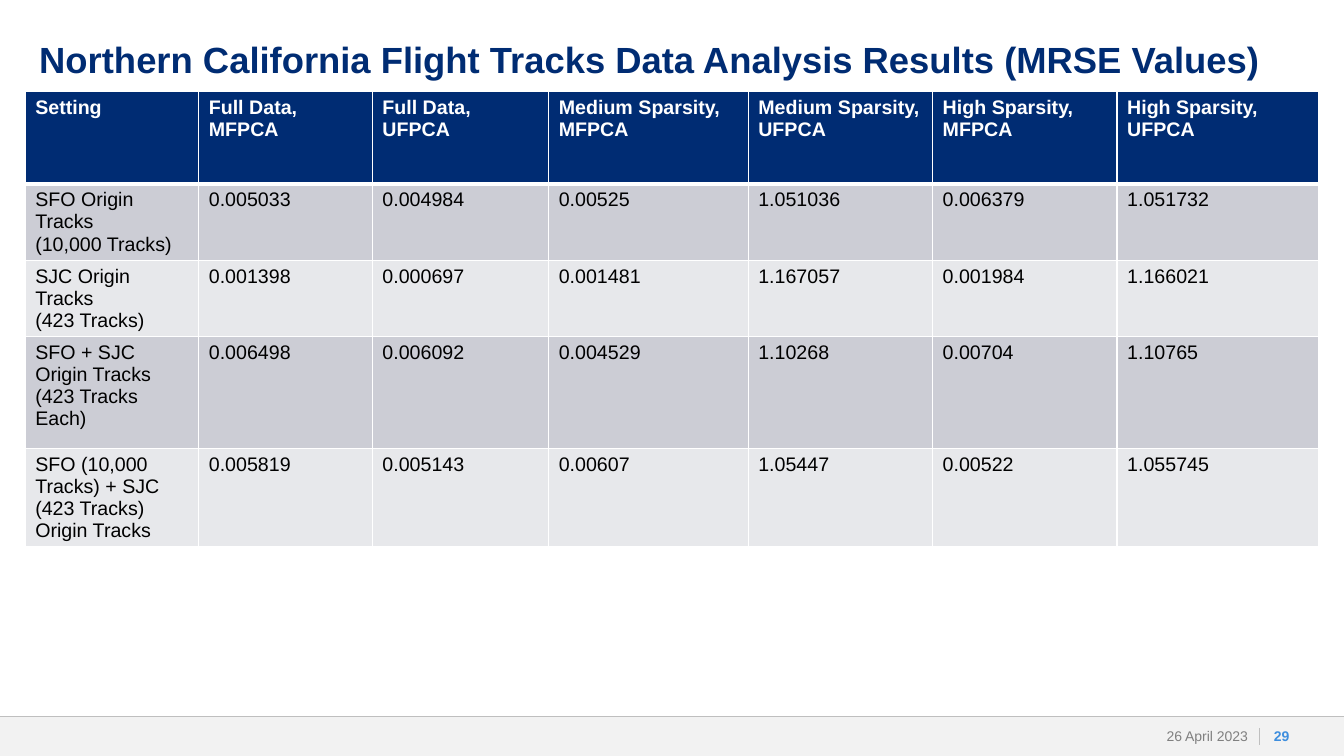
"""Build the slide of MRSE values for Northern California flight tracks."""
from lxml import etree
from pptx import Presentation
from pptx.dml.color import RGBColor
from pptx.enum.shapes import MSO_CONNECTOR, MSO_SHAPE
from pptx.enum.text import MSO_ANCHOR, MSO_AUTO_SIZE, PP_ALIGN
from pptx.oxml.ns import qn
from pptx.util import Pt

LEFT, RIGHT, CENTER = PP_ALIGN.LEFT, PP_ALIGN.RIGHT, PP_ALIGN.CENTER
TOP, MIDDLE = MSO_ANCHOR.TOP, MSO_ANCHOR.MIDDLE
STRAIGHT, RECTANGLE = MSO_CONNECTOR.STRAIGHT, MSO_SHAPE.RECTANGLE
FIXED_SIZE = MSO_AUTO_SIZE.NONE

TITLE = "Northern California Flight Tracks Data Analysis Results (MRSE Values)"
DATE, PAGE_NUMBER = "26 April 2023", "29"
ROWS = [
    ("Setting", "Full Data,\nMFPCA", "Full Data,\nUFPCA", "Medium Sparsity,\nMFPCA",
     "Medium Sparsity,\nUFPCA", "High Sparsity,\nMFPCA", "High Sparsity,\nUFPCA"),
    ("SFO Origin Tracks\n(10,000 Tracks)", "0.005033", "0.004984", "0.00525",
     "1.051036", "0.006379", "1.051732"),
    ("SJC Origin Tracks\n(423 Tracks)", "0.001398", "0.000697", "0.001481",
     "1.167057", "0.001984", "1.166021"),
    ("SFO + SJC Origin Tracks\n(423 Tracks Each)", "0.006498", "0.006092", "0.004529",
     "1.10268", "0.00704", "1.10765"),
    ("SFO (10,000 Tracks) + SJC (423 Tracks) Origin Tracks", "0.005819", "0.005143",
     "0.00607", "1.05447", "0.00522", "1.055745"),
]
COLUMN_WIDTHS = [124, 124, 126, 142.5, 131.75, 131.75, 144]
ROW_HEIGHTS = [66, 54.5, 54.5, 80, 70]
COLORS = {"navy": "002C73", "white": "FFFFFF", "black": "000000", "odd": "CCCDD5",
          "even": "E7E8EB", "bar": "F2F2F2", "rule": "BFBFBF", "gray": "808080",
          "blue": "3E8EDE"}
PAGE_WIDTH, PAGE_HEIGHT = 960, 540
FOOTER_TOP, FOOTER_HEIGHT = 512, 28


def color(name):
    return RGBColor.from_string(COLORS[name])


def format_text(frame, size, name, bold=False, align=LEFT, spacing=1.0):
    for para in frame.paragraphs:
        para.alignment = align
        para.line_spacing = spacing
        for span in para.runs:
            values = {"name": "Arial", "size": Pt(size), "bold": bold}
            for key, value in values.items():
                setattr(span.font, key, value)
            span.font.color.rgb = color(name)


def set_frame(frame, side_margin, anchor):
    values = {"margin_left": Pt(side_margin), "margin_right": Pt(side_margin),
              "margin_top": 0, "margin_bottom": 0, "word_wrap": True,
              "auto_size": FIXED_SIZE, "vertical_anchor": anchor}
    for key, value in values.items():
        setattr(frame, key, value)


def add_title(page):
    title = page.shapes.title
    title.left, title.top, title.width, title.height = Pt(28), Pt(30), Pt(888), Pt(60)
    title.text_frame.text = TITLE
    set_frame(title.text_frame, 0, TOP)
    format_text(title.text_frame, 26, "navy", bold=True, spacing=0.9)


def add_rule(page, x1, y1, x2, y2):
    rule = page.shapes.add_connector(STRAIGHT, Pt(x1), Pt(y1), Pt(x2), Pt(y2))
    rule.line.color.rgb = color("rule")
    rule.line.width = Pt(0.5)
    etree.SubElement(rule._element.spPr, qn("a:effectLst"))


def add_footer(page):
    bar = page.shapes.add_shape(RECTANGLE, 0, Pt(FOOTER_TOP), Pt(PAGE_WIDTH),
                                Pt(FOOTER_HEIGHT))
    bar.shadow.inherit = False
    bar.fill.solid()
    bar.fill.fore_color.rgb = color("bar")
    bar.line.fill.background()
    add_rule(page, 0, FOOTER_TOP, PAGE_WIDTH, FOOTER_TOP)
    add_rule(page, 899.5, 520, 899.5, 532)
    labels = [(DATE, 790.5, 108, 7.2, RIGHT, "gray", False),
              (PAGE_NUMBER, 900.5, 30, 0, CENTER, "blue", True)]
    for text, left, width, margin, align, name, bold in labels:
        box = page.shapes.add_textbox(Pt(left), Pt(FOOTER_TOP), Pt(width),
                                      Pt(FOOTER_HEIGHT))
        box.text_frame.text = text
        set_frame(box.text_frame, margin, MIDDLE)
        format_text(box.text_frame, 10, name, bold, align)


def set_borders(cell, top, bottom):
    properties = cell._tc.get_or_add_tcPr()
    for side, width in {"L": 1, "R": 1, "T": top, "B": bottom}.items():
        line = etree.SubElement(properties, qn(f"a:ln{side}"), w=str(Pt(width)))
        fill = etree.SubElement(line, qn("a:solidFill"))
        etree.SubElement(fill, qn("a:srgbClr"), val=COLORS["white"])


def add_results(page):
    frame = page.shapes.add_table(len(ROWS), len(COLUMN_WIDTHS), Pt(18), Pt(65.5),
                                  Pt(sum(COLUMN_WIDTHS)), Pt(sum(ROW_HEIGHTS)))
    table = frame.table
    for column, width in zip(table.columns, COLUMN_WIDTHS):
        column.width = Pt(width)
    for index, (row, height, texts) in enumerate(zip(table.rows, ROW_HEIGHTS, ROWS)):
        row.height = Pt(height)
        header = index == 0
        shade = "navy" if header else "odd" if index % 2 else "even"
        for cell, text in zip(row.cells, texts):
            cell.text = text
            set_borders(cell, 3 if index == 1 else 1, 3 if header else 1)
            cell.fill.solid()
            cell.fill.fore_color.rgb = color(shade)
            format_text(cell.text_frame, 14, "white" if header else "black", header)


def main():
    deck = Presentation()
    deck.slide_width, deck.slide_height = Pt(PAGE_WIDTH), Pt(PAGE_HEIGHT)
    page = deck.slides.add_slide(deck.slide_layouts[5])
    add_footer(page)
    add_title(page)
    add_results(page)
    deck.save("out.pptx")


if __name__ == "__main__":
    main()
